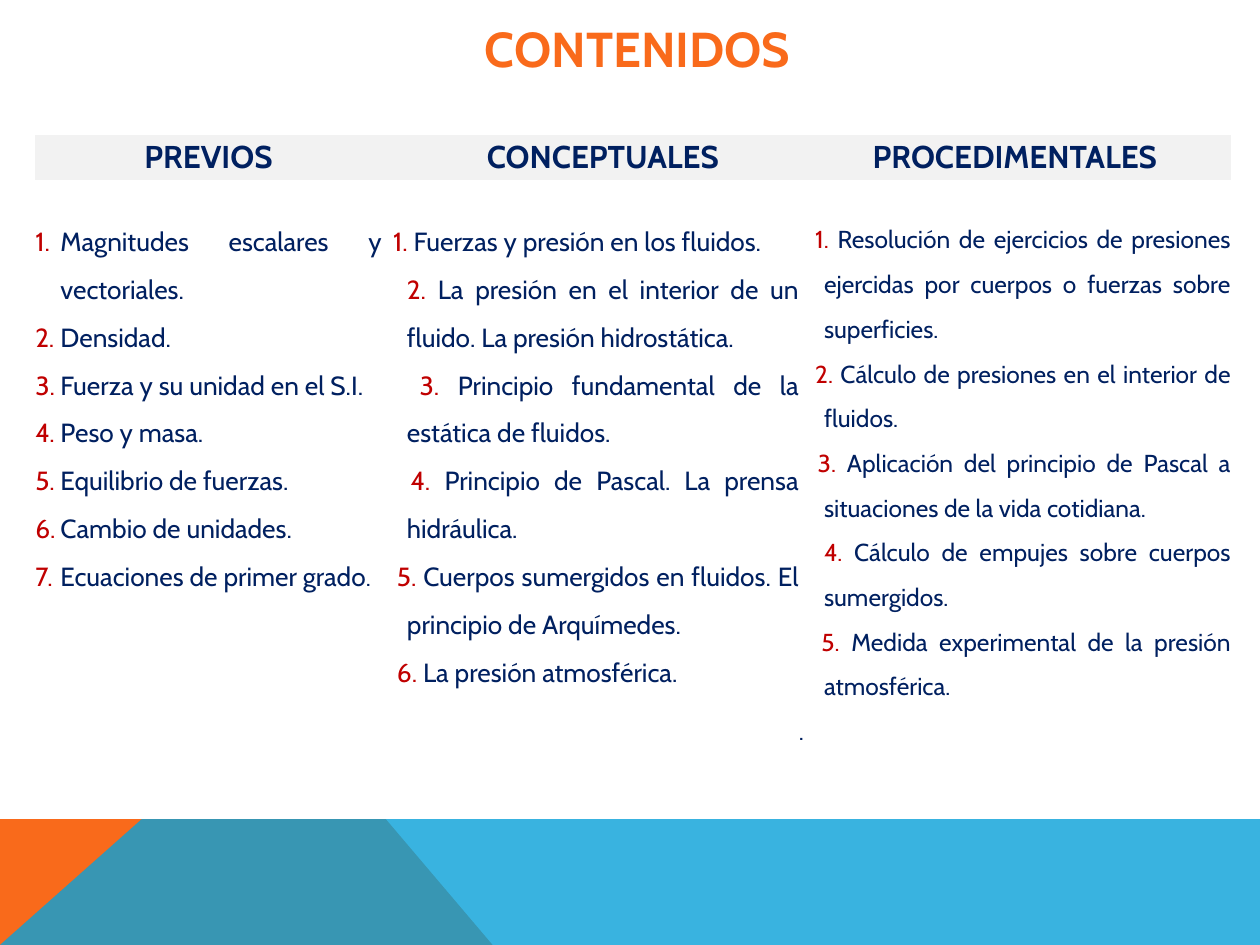
from pptx import Presentation
from pptx.dml.color import RGBColor
from pptx.enum.shapes import MSO_SHAPE
from pptx.enum.text import MSO_ANCHOR, PP_ALIGN
from pptx.oxml.ns import qn
from pptx.util import Inches, Pt
from lxml.etree import SubElement

FONT = "Cabin"
COLORS = {"orange": "F96A1B", "blue": "08A1D9", "navy": "002060",
          "red": "C00000", "gray": "F2F2F2", "white": "FFFFFF"}
NO_STYLE = "{2D5ABB26-0587-4C30-8999-92F81FD0307C}"

TITLE = "CONTENIDOS"
# Each item is its first-line indent in inches and its text.
# gap stands between number and text; final_stop ends the last item in 14 points.
HANGING = -0.2
COLUMNS = [
    {"head": "PREVIOS", "width": 2.75, "size": 15, "gap": "\t", "final_stop": ".",
     "items": [(HANGING, "Magnitudes escalares y vectoriales."),
               (HANGING, "Densidad."),
               (HANGING, "Fuerza y su unidad en el S.I."),
               (HANGING, "Peso y masa."),
               (HANGING, "Equilibrio de fuerzas."),
               (HANGING, "Cambio de unidades."),
               (HANGING, "Ecuaciones de primer grado")]},
    {"head": "CONCEPTUALES", "width": 3.31, "size": 15, "gap": " ", "head_inset": 0.2,
     "items": [(-0.11, "Fuerzas y presión en los fluidos."),
               (0, "La presión en el interior de un fluido. La presión hidrostática."),
               (0.1, "Principio fundamental de la estática de fluidos."),
               (0.03, "Principio de Pascal. La prensa hidráulica."),
               (-0.08, "Cuerpos sumergidos en fluidos. El principio de Arquímedes."),
               (-0.08, "La presión atmosférica.")]},
    {"head": "PROCEDIMENTALES", "width": 3.43, "size": 14, "gap": " ", "closing": ".",
     "items": [(-0.07, "Resolución de ejercicios de presiones ejercidas por cuerpos o "
                       "fuerzas sobre superficies."),
               (-0.07, "Cálculo de presiones en el interior de fluidos."),
               (-0.05, "Aplicación del principio de Pascal a situaciones de la vida "
                       "cotidiana."),
               (0, "Cálculo de empujes sobre cuerpos sumergidos."),
               (-0.02, "Medida experimental de la presión atmosférica.")]},
]
ROW_HEIGHTS = [0.36, 4.31]
BANDS = [
    ([(0, 7.5), (0, 5.52), (2.23, 5.52), (3.91, 7.5)], "orange", 100),
    ([(0, 7.5), (2.23, 5.52), (10, 5.53), (10, 7.5)], "blue", 80),
]


def rgb(name):
    return RGBColor.from_string(COLORS[name])


def paint(shape, color, opacity=100):
    shape.shadow.inherit = False
    shape.fill.solid()
    shape.fill.fore_color.rgb = rgb(color)
    shape.line.fill.background()
    if opacity < 100:
        tint = shape.fill._xPr.find(qn("a:solidFill"))[0]
        SubElement(tint, qn("a:alpha"), val=str(opacity * 1000))


def add_text(para, text, size=14, color="navy", bold=False):
    span = para.add_run()
    span.text = text
    span.font.name = FONT
    span.font.size = Pt(size)
    span.font.bold = bold
    span.font.color.rgb = rgb(color)


def list_paragraph(frame, index, first):
    """Return a justified paragraph with a 0.2 inch margin and a first-line indent."""
    para = frame.paragraphs[0] if index == 0 else frame.add_paragraph()
    para.alignment = PP_ALIGN.JUSTIFY
    para.line_spacing = 1.5
    properties = para._p.get_or_add_pPr()
    properties.set("marL", str(Inches(0.2)))
    properties.set("indent", str(Inches(first)))
    return para


def clear_margins(cell):
    cell.margin_left = cell.margin_right = cell.margin_top = cell.margin_bottom = 0


def fill_header(cell, column):
    clear_margins(cell)
    cell.margin_left = Inches(column.get("head_inset", 0))
    cell.vertical_anchor = MSO_ANCHOR.MIDDLE
    cell.fill.solid()
    cell.fill.fore_color.rgb = rgb("gray")
    para = cell.text_frame.paragraphs[0]
    para.alignment = PP_ALIGN.CENTER
    add_text(para, column["head"], size=18, bold=True)


def fill_list(cell, column):
    clear_margins(cell)
    cell.margin_top = Inches(0.24)
    cell.fill.background()
    frame = cell.text_frame
    for index, (first, item) in enumerate(column["items"]):
        para = list_paragraph(frame, index, first)
        add_text(para, f"{index + 1}.{column['gap']}", size=column["size"], color="red")
        add_text(para, item, size=column["size"])
    if "final_stop" in column:
        add_text(para, column["final_stop"])
    if "closing" in column:
        para = list_paragraph(frame, len(column["items"]), HANGING)
        add_text(para, column["closing"])


def add_bands(page):
    for points, color, opacity in BANDS:
        corners = [(Inches(x), Inches(y)) for x, y in points]
        builder = page.shapes.build_freeform(*corners[0])
        builder.add_line_segments(corners[1:], close=True)
        paint(builder.convert_to_shape(), color, opacity)
    cover = page.shapes.add_shape(MSO_SHAPE.RECTANGLE, 0, Inches(5.48),
                                  Inches(10), Inches(1.02))
    paint(cover, "white")


def add_title(page):
    title = page.shapes.title
    title.left, title.top = Inches(0.95), Inches(0.08)
    title.width, title.height = Inches(8.22), Inches(0.6)
    title.text_frame.vertical_anchor = MSO_ANCHOR.MIDDLE
    para = title.text_frame.paragraphs[0]
    para.alignment = PP_ALIGN.CENTER
    add_text(para, TITLE, size=28, color="orange", bold=True)


def add_contents(page):
    width = sum(column["width"] for column in COLUMNS)
    frame = page.shapes.add_table(len(ROW_HEIGHTS), len(COLUMNS), Inches(0.28), Inches(1.07),
                                  Inches(width), Inches(sum(ROW_HEIGHTS)))
    table = frame.table
    table.first_row = table.horz_banding = False
    table._tbl.tblPr.find(qn("a:tableStyleId")).text = NO_STYLE
    for row, height in zip(table.rows, ROW_HEIGHTS):
        row.height = Inches(height)
    for index, column in enumerate(COLUMNS):
        table.columns[index].width = Inches(column["width"])
        fill_header(table.cell(0, index), column)
        fill_list(table.cell(1, index), column)


def main():
    deck = Presentation()
    deck.slide_width, deck.slide_height = Inches(10), Inches(7.5)
    page = deck.slides.add_slide(deck.slide_layouts[5])
    add_bands(page)
    add_title(page)
    add_contents(page)
    deck.save("out.pptx")


if __name__ == "__main__":
    main()
